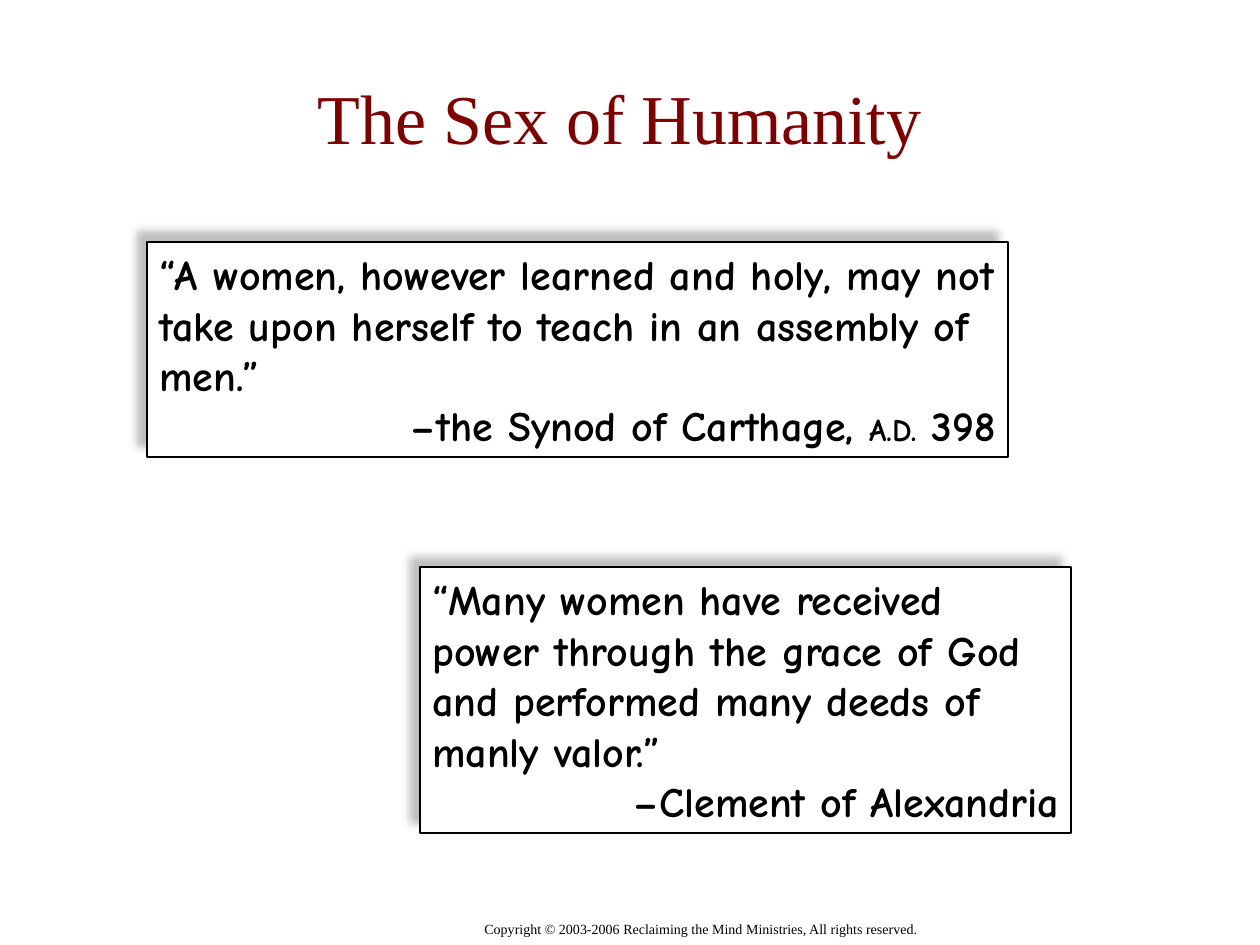
"""Build a slide with a title, two shadowed quotations and a copyright line."""
from dataclasses import dataclass

import lxml.etree
import pptx
import pptx.dml.color
import pptx.enum.shapes
import pptx.enum.text
import pptx.oxml.ns
import pptx.util

EMU_PER_PX = 914400 / 126
BLACK = pptx.dml.color.RGBColor(0x00, 0x00, 0x00)
WHITE = pptx.dml.color.RGBColor(0xFF, 0xFF, 0xFF)
GRAY = pptx.dml.color.RGBColor(0x80, 0x80, 0x80)
MAROON = pptx.dml.color.RGBColor(0x80, 0x00, 0x00)
SERIF = "Times New Roman"
COMIC = "Comic Neue"
ALIGN = pptx.enum.text.PP_ALIGN
ANCHOR = pptx.enum.text.MSO_ANCHOR


@dataclass(frozen=True)
class Area:
    left: int
    top: int
    width: int
    height: int

    def emu(self) -> list[int]:
        return [px(n) for n in (self.left, self.top, self.width, self.height)]


@dataclass(frozen=True)
class Quote:
    area: Area
    words: str
    source: list[tuple[str, int]]


QUOTES = [
    Quote(
        Area(420, 567, 651, 266),
        "“Many women have received power through the grace of God "
        "and performed many deeds of manly valor.”",
        [("–Clement of Alexandria", 24)],
    ),
    Quote(
        Area(147, 242, 861, 215),
        "“A women, however learned and holy, may not take upon herself "
        "to teach in an assembly of men.”",
        [("–the Synod of Carthage, ", 24), ("A.D.", 18), (" 398", 24)],
    ),
]


def px(length: int) -> int:
    return round(length * EMU_PER_PX)


def add_text(para, text: str, *, size: int, font: str, color=BLACK,
             bold: bool = False, align=ALIGN.LEFT) -> None:
    para.alignment = align
    span = para.add_run()
    span.text = text
    span.font.size = pptx.util.Pt(size)
    span.font.name = font
    span.font.bold = bold
    span.font.color.rgb = color


def add_label(page, area: Area, text: str, *, anchor=ANCHOR.TOP, **text_format) -> None:
    box = page.shapes.add_textbox(*area.emu())
    box.text_frame.word_wrap = True
    box.text_frame.vertical_anchor = anchor
    add_text(box.text_frame.paragraphs[0], text, **text_format)


def add_shadow(box) -> None:
    qn = pptx.oxml.ns.qn
    box.shadow.inherit = False
    effects = box.element.spPr.find(qn("a:effectLst"))
    shadow = lxml.etree.SubElement(
        effects, qn("a:outerShdw"), blurRad=str(pptx.util.Pt(5)),
        dist=str(pptx.util.Pt(8.5)), dir=str(225 * 60000), algn="ctr", rotWithShape="0")
    color = lxml.etree.SubElement(shadow, qn("a:srgbClr"), val=str(GRAY))
    lxml.etree.SubElement(color, qn("a:alpha"), val="50000")


def add_quote(page, quote: Quote) -> None:
    box = page.shapes.add_shape(
        pptx.enum.shapes.MSO_SHAPE.RECTANGLE, *quote.area.emu())
    box.fill.solid()
    box.fill.fore_color.rgb = WHITE
    box.line.color.rgb = BLACK
    box.line.width = pptx.util.Pt(0.75)
    add_shadow(box)
    frame = box.text_frame
    frame.word_wrap = True
    frame.vertical_anchor = ANCHOR.MIDDLE
    frame.auto_size = pptx.enum.text.MSO_AUTO_SIZE.SHAPE_TO_FIT_TEXT
    add_text(frame.paragraphs[0], quote.words, size=24, font=COMIC, bold=True)
    source_para = frame.add_paragraph()
    for text, size in quote.source:
        add_text(source_para, text, size=size, font=COMIC, bold=True, align=ALIGN.RIGHT)


def main() -> None:
    deck = pptx.Presentation()
    deck.slide_width, deck.slide_height = px(1260), px(945)
    page = deck.slides.add_slide(deck.slide_layouts[6])
    add_label(
        page, Area(472, 914, 577, 31),
        "Copyright © 2003-2006 Reclaiming the Mind Ministries, All rights reserved.",
        size=8, font=SERIF)
    add_label(
        page, Area(42, 38, 1155, 158), "The Sex of Humanity", anchor=ANCHOR.MIDDLE,
        size=40, font=SERIF, color=MAROON, align=ALIGN.CENTER)
    for quote in QUOTES:
        add_quote(page, quote)
    deck.save("out.pptx")


if __name__ == "__main__":
    main()
